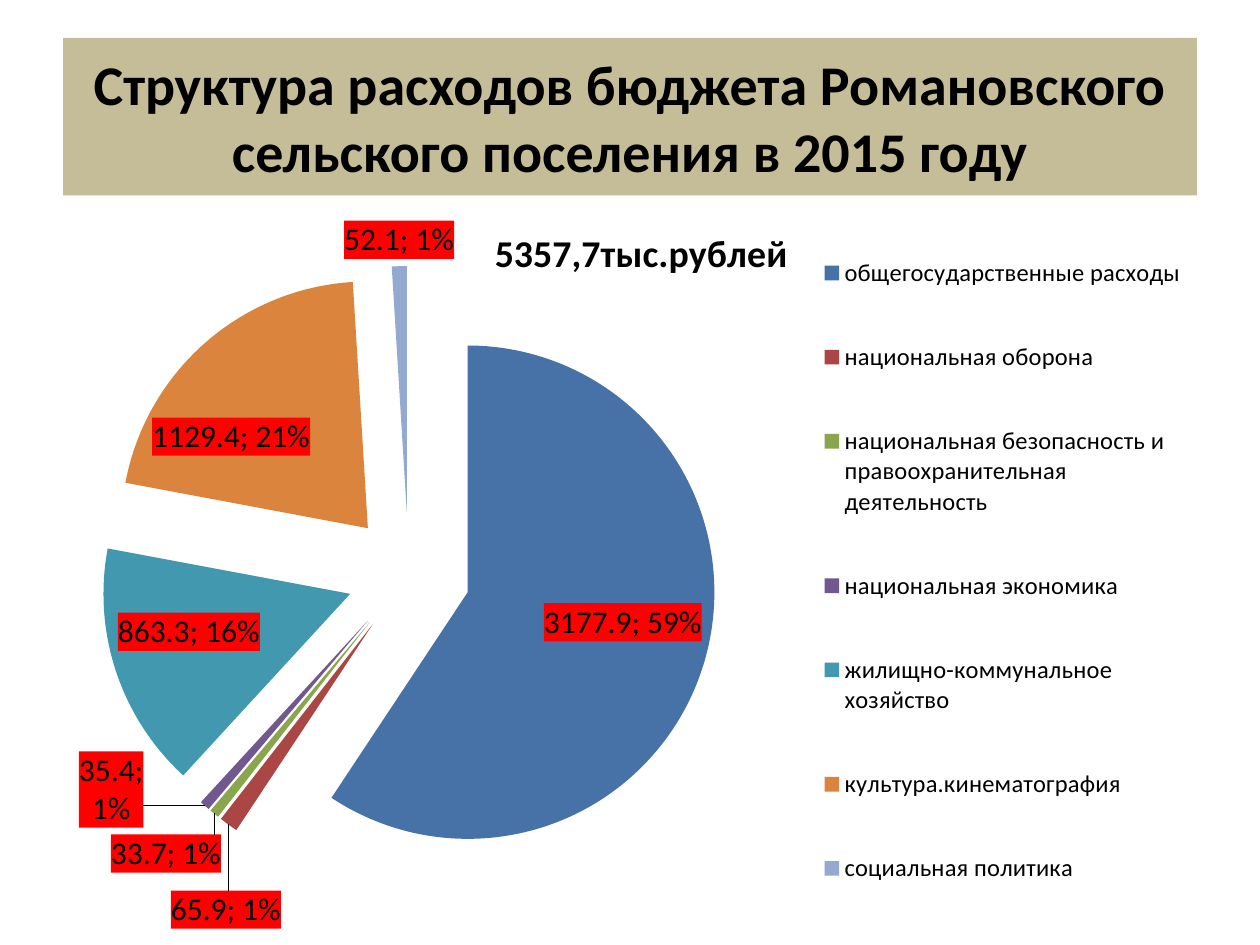
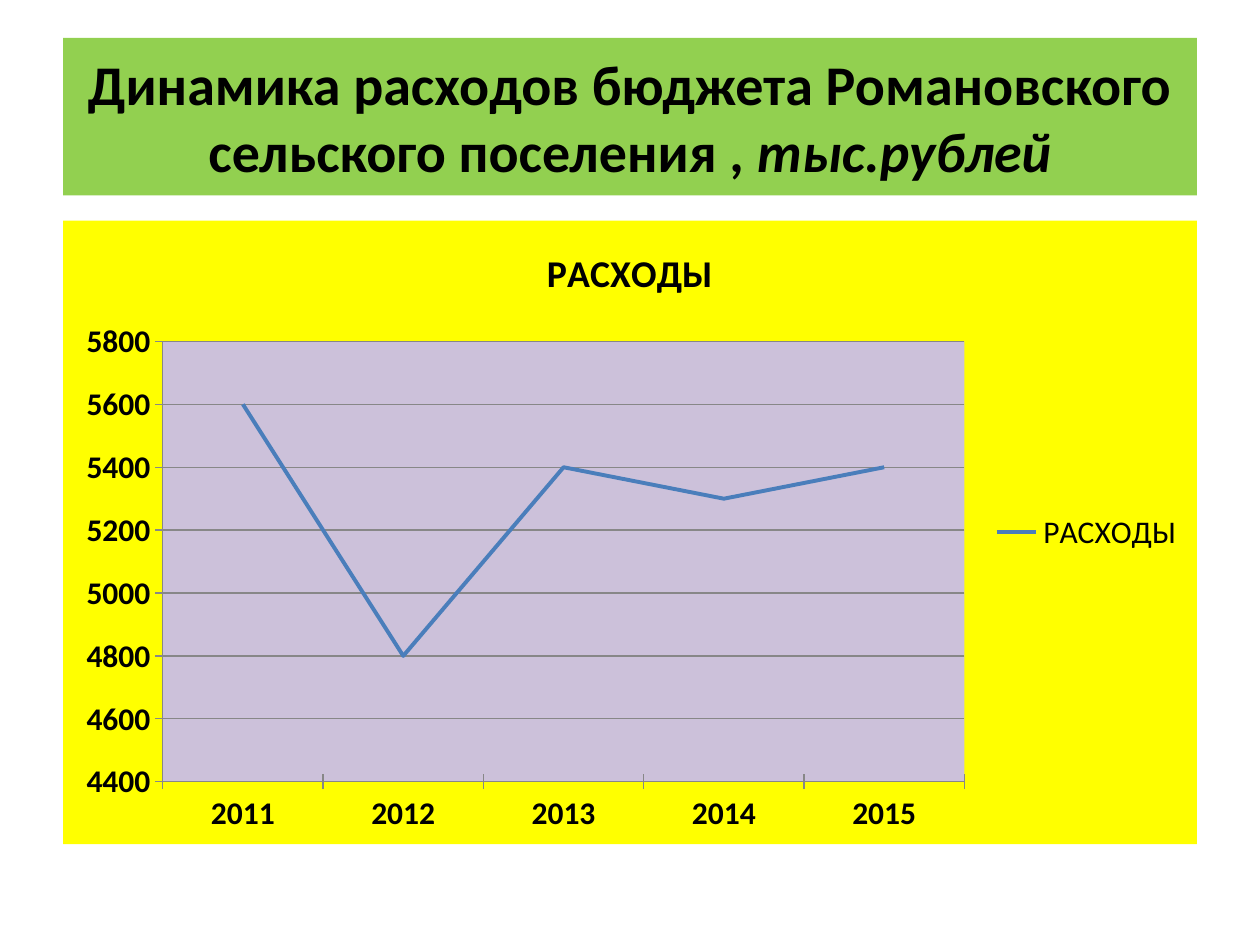
from dataclasses import dataclass

from lxml import etree
from pptx import Presentation
from pptx.chart.data import CategoryChartData
from pptx.dml.color import RGBColor
from pptx.enum.chart import XL_CHART_TYPE, XL_LEGEND_POSITION, XL_MARKER_STYLE, XL_TICK_MARK
from pptx.enum.text import MSO_ANCHOR, MSO_AUTO_SIZE, PP_ALIGN
from pptx.oxml.ns import nsdecls, qn
from pptx.util import Pt

PIE, LINE = XL_CHART_TYPE.PIE, XL_CHART_TYPE.LINE_STACKED
RIGHT, CROSS, NO_MARKER = XL_LEGEND_POSITION.RIGHT, XL_TICK_MARK.CROSS, XL_MARKER_STYLE.NONE
MIDDLE, CENTER, NO_AUTOFIT = MSO_ANCHOR.MIDDLE, PP_ALIGN.CENTER, MSO_AUTO_SIZE.NONE
PX = 9144
TITLE_ONLY = 5

EXPENSES = [
    ("общегосударственные расходы", 3177.9, "4672A8", None),
    ("национальная оборона", 65.9, "AA4644", (0.05, 0.08, "; ")),
    ("национальная безопасность и правоохранительная деятельность", 33.7, "89A54E",
     (0.01, 0.02, "; ")),
    ("национальная экономика", 35.4, "71588F", (-0.05, -0.08, ";\n")),
    ("жилищно-коммунальное хозяйство", 863.3, "4298AF", None),
    ("культура.кинематография", 1129.4, "DB843D", None),
    ("социальная политика", 52.1, "93A9CF", None),
]
YEARS = {"2011": 5600, "2012": 4800, "2013": 5400, "2014": 5300, "2015": 5400}


@dataclass(frozen=True)
class Theme:
    """Colours, font and type sizes of the deck."""
    font: str = "Calibri"
    text: str = "000000"
    sand: str = "C4BD97"
    green: str = "92D050"
    yellow: str = "FFFF00"
    lilac: str = "CCC1DA"
    red: str = "FF0000"
    blue: str = "4A7EBB"
    grid: str = "878787"
    title: float = 32
    chart_title: float = 21.6
    body: float = 18
    legend: float = 14


def rgb(value):
    """Turn a hex string into a colour."""
    return RGBColor.from_string(value)


def chart_xml(tag, body):
    """Parse one chart element."""
    return etree.fromstring(f"<c:{tag} {nsdecls('c', 'a')}>{body}</c:{tag}>")


def fill_xml(color):
    """Give the shape properties of a plain fill without a line."""
    return f'<a:solidFill><a:srgbClr val="{color}"/></a:solidFill><a:ln><a:noFill/></a:ln>'


def layout_xml(**values):
    """Give the content of a manual layout."""
    items = "".join(f'<c:{key} val="{value}"/>' for key, value in values.items())
    return f"<c:manualLayout>{items}</c:manualLayout>"


def label_xml(color, separator):
    """Give the content of a value and percent label."""
    shows = {"LegendKey": 0, "Val": 1, "CatName": 0, "SerName": 0, "Percent": 1, "BubbleSize": 0}
    return (f'<c:spPr>{fill_xml(color)}</c:spPr><c:dLblPos val="bestFit"/>'
            + "".join(f'<c:show{key} val="{on}"/>' for key, on in shows.items())
            + f"<c:separator>{separator}</c:separator>")


def set_layout(parent, index, **values):
    """Replace the layout of a chart part."""
    for old in parent.findall(qn("c:layout")):
        parent.remove(old)
    parent.insert(index, chart_xml("layout", layout_xml(**values)))


class Deck:
    """Holds the style and the current slide."""

    def __init__(self, prs, theme):
        """Set the slide size."""
        self.prs, self.theme, self.s = prs, theme, None
        prs.slide_width, prs.slide_height = 1000 * PX, 750 * PX

    def style(self, font, size, bold=False):
        """Apply the deck's font."""
        font.name, font.size, font.bold = self.theme.font, Pt(size), bold
        font.color.rgb = rgb(self.theme.text)

    def slide(self, color, *runs):
        """Start a slide with a title band; runs are (text, italic)."""
        self.s = self.prs.slides.add_slide(self.prs.slide_layouts[TITLE_ONLY])
        sp = self.s.shapes.title
        sp.left, sp.top, sp.width, sp.height = 50 * PX, 30 * PX, 900 * PX, 125 * PX
        sp.fill.solid()
        sp.fill.fore_color.rgb = rgb(color)
        tf = sp.text_frame
        tf.word_wrap, tf.auto_size, tf.vertical_anchor = True, NO_AUTOFIT, MIDDLE
        p = tf.paragraphs[0]
        p.alignment = CENTER
        for text, italic in runs:
            r = p.add_run()
            r.text = text
            self.style(r.font, self.theme.title, True)
            r.font.italic = italic

    def chart(self, kind, box, title, series, points, legend_size):
        """Add a titled chart with a legend on the right."""
        data = CategoryChartData()
        data.categories = list(points)
        data.add_series(series, list(points.values()))
        chart = self.s.shapes.add_chart(kind, *(n * PX for n in box), data).chart
        self.style(chart.font, self.theme.body)
        chart.has_title = True
        r = chart.chart_title.text_frame.paragraphs[0].add_run()
        r.text = title
        self.style(r.font, self.theme.chart_title, True)
        chart.has_legend = True
        chart.legend.position, chart.legend.include_in_layout = RIGHT, False
        self.style(chart.legend.font, legend_size)
        return chart

    def plot_area(self, chart, x, y, w, h):
        """Place the inner plot area and return it."""
        area = chart.element.find(".//" + qn("c:plotArea"))
        set_layout(area, 0, layoutTarget="inner", xMode="edge", yMode="edge", x=x, y=y, w=w, h=h)
        return area

    def pie(self, box, title, rows):
        """Add an exploded pie; rows are (name, value, colour, label shift and separator)."""
        points = {name: value for name, value, _, _ in rows}
        chart = self.chart(PIE, box, title, "Расходы", points, self.theme.legend)
        self.plot_area(chart, 0.005, 0.093, 0.59, 0.824)
        set_layout(chart.chart_title.element, 1, xMode="edge", yMode="edge", x=0.37, y=0.03)
        set_layout(chart.element.find(".//" + qn("c:legend")), 1,
                   xMode="edge", yMode="edge", x=0.66, y=0.01, w=0.33, h=0.98)
        plot = chart.plots[0]
        plot.vary_by_categories = True
        ser = plot.series[0]
        labels = ""
        for i, (_, _, color, label) in enumerate(rows):
            fill = ser.points[i].format.fill
            fill.solid()
            fill.fore_color.rgb = rgb(color)
            if label:
                x, y, separator = label
                labels += (f'<c:dLbl><c:idx val="{i}"/><c:layout>{layout_xml(x=x, y=y)}</c:layout>'
                           f"{label_xml(self.theme.red, separator)}</c:dLbl>")
        labels += label_xml(self.theme.red, "; ") + '<c:showLeaderLines val="1"/>'
        node = ser._element
        explosion = chart_xml("explosion", "")
        explosion.set("val", "25")
        node.find(qn("c:dPt")).addprevious(explosion)
        node.find(qn("c:cat")).addprevious(chart_xml("dLbls", labels))

    def line(self, box, title, points):
        """Add a line chart on a coloured ground."""
        chart = self.chart(LINE, box, title, title, points, self.theme.body)
        area = self.plot_area(chart, 0.088, 0.194, 0.707, 0.706)
        area.append(chart_xml("spPr", fill_xml(self.theme.lilac)))
        chart.element.find(qn("c:chart")).addnext(chart_xml("spPr", fill_xml(self.theme.yellow)))
        value = chart.value_axis
        value.minimum_scale, value.maximum_scale, value.major_unit = 4400, 5800, 200
        value.has_major_gridlines = True
        chart.category_axis.has_major_gridlines = False
        for axis in (value, chart.category_axis):
            axis.major_tick_mark = CROSS
            self.style(axis.tick_labels.font, self.theme.body, True)
        for part in (value, chart.category_axis, value.major_gridlines):
            part.format.line.color.rgb = rgb(self.theme.grid)
            part.format.line.width = Pt(0.75)
        chart.plots[0].vary_by_categories = False
        ser = chart.plots[0].series[0]
        ser.smooth, ser.marker.style = False, NO_MARKER
        ser.format.line.color.rgb = rgb(self.theme.blue)
        ser.format.line.width = Pt(2.25)


def main():
    """Build and save the deck."""
    theme = Theme()
    prs = Presentation()
    deck = Deck(prs, theme)
    deck.slide(theme.sand,
               ("Структура расходов бюджета Романовского сельского поселения в 2015 году", False))
    deck.pie((55, 156, 898, 594), "5357,7тыс.рублей", EXPENSES)
    deck.slide(theme.green,
               ("Динамика расходов бюджета Романовского сельского поселения , ", False),
               ("тыс.рублей", True))
    deck.line((50, 175, 900, 495), "РАСХОДЫ", YEARS)
    prs.save("out.pptx")


if __name__ == "__main__":
    main()
